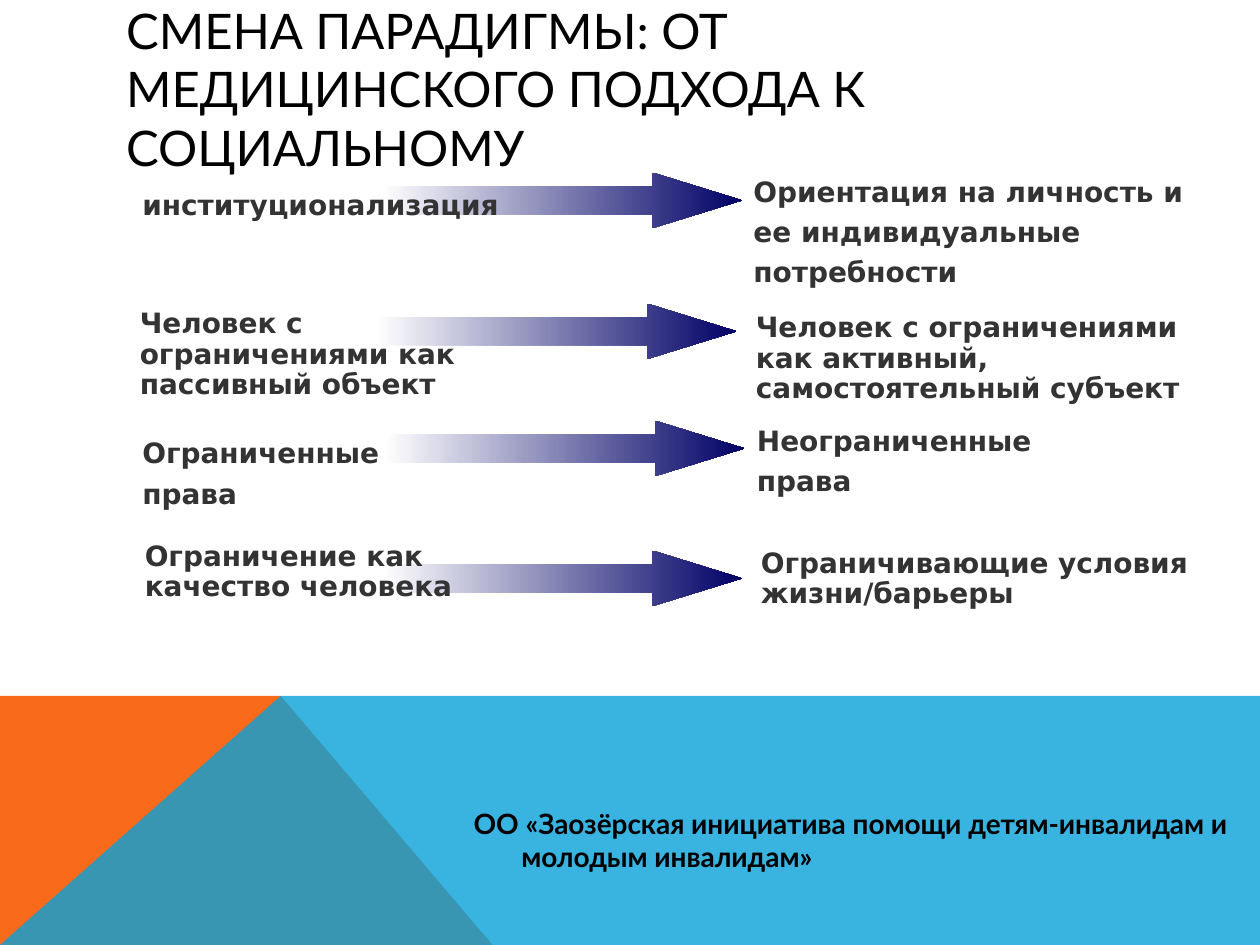
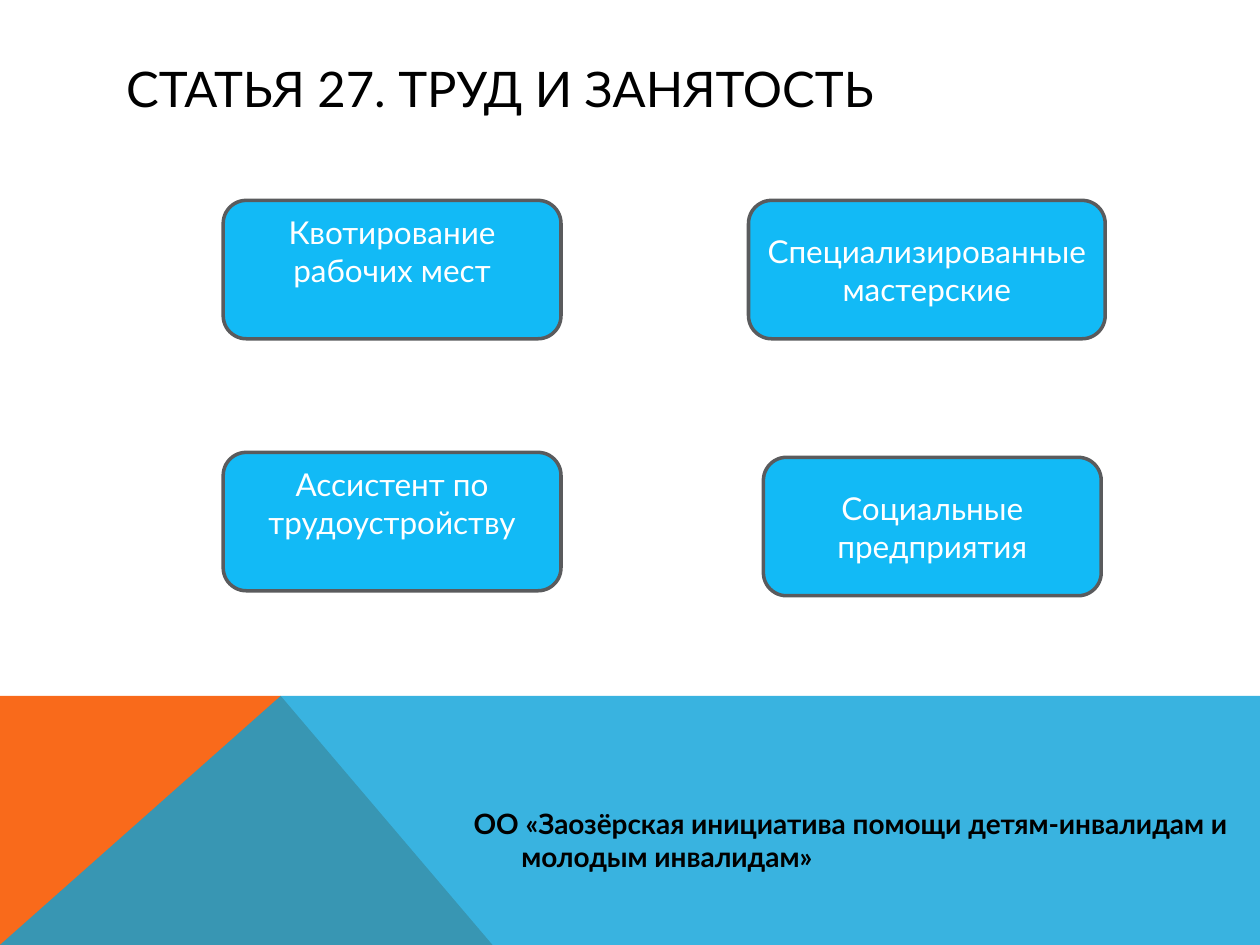
from dataclasses import dataclass

from pptx import Presentation
from pptx.dml.color import RGBColor
from pptx.enum.shapes import MSO_SHAPE
from pptx.enum.text import MSO_ANCHOR, MSO_AUTO_SIZE, PP_ALIGN
from pptx.oxml.ns import qn
from pptx.oxml.xmlchemy import OxmlElement
from pptx.presentation import Presentation as Deck
from pptx.shapes.autoshape import Shape
from pptx.slide import Slide
from pptx.text.text import _Paragraph as Paragraph
from pptx.util import Cm, Pt


@dataclass(frozen=True)
class TextStyle:
    font: str
    size: int
    color: str
    bold: bool = False


@dataclass(frozen=True)
class Theme:
    title: TextStyle = TextStyle("Lato", 28, "000000")
    footer: TextStyle = TextStyle("Lato", 16, "000000", True)
    approach: TextStyle = TextStyle("DejaVu Sans", 16, "333333", True)
    measure: TextStyle = TextStyle("Lato", 18, "FFFFFF")
    orange: str = "F96A1B"
    blue: str = "08A1D9"
    blue_opacity: int = 80
    arrow_start: str = "FFFFFF"
    arrow_end: str = "000066"
    measure_fill: str = "12BAF6"
    measure_line: str = "5A5B5D"


@dataclass(frozen=True)
class Box:
    """A rectangle in centimetres."""
    left: float
    top: float
    width: float
    height: float

    def lengths(self) -> tuple[Cm, Cm, Cm, Cm]:
        return Cm(self.left), Cm(self.top), Cm(self.width), Cm(self.height)


@dataclass(frozen=True)
class Approach:
    text: str
    box: Box


@dataclass(frozen=True)
class Shift:
    """A move from the medical approach to the social one."""
    medical: Approach
    social: Approach
    arrow_left: float
    arrow_top: float
    line_spacing: float


@dataclass(frozen=True)
class Measure:
    text: str
    box: Box
    raised: bool = False


THEME = Theme()
SLIDE_WIDTH, SLIDE_HEIGHT = 25.4, 19.05
BAND_TOP, PEAK_X, ORANGE_RIGHT = 14.03, 5.66, 9.93
TITLE_BOX = Box(2.29, 1.02, 20.88, 1.52)
FOOTER_BOX = Box(9.3, 16.13, 16.1, 2.21)
FOOTER_INDENT = 0.96
FOOTER_TEXT = "ОО «Заозёрская инициатива помощи детям-инвалидам и молодым инвалидам»"
ARROW_WIDTH, ARROW_HEIGHT = 7.26, 1.12
SIDE_INSET, RAISED_INSET = 0.15, 0.89

SHIFTS = (
    Shift(
        Approach("институционализация", Box(2.62, 3.53, 7.85, 1.07)),
        Approach("Ориентация на личность и ее индивидуальные потребности",
                 Box(14.94, 3.25, 9.25, 2.72)),
        7.7, 3.48, 1.2),
    Shift(
        Approach("Человек с ограничениями как пассивный объект",
                 Box(2.57, 6.12, 7.75, 2.11)),
        Approach("Человек с ограничениями как активный, самостоятельный субъект",
                 Box(14.99, 6.2, 9.27, 2.08)),
        7.59, 6.12, 0.9),
    Shift(
        Approach("Ограниченные права", Box(2.62, 8.53, 7.32, 1.8)),
        Approach("Неограниченные права", Box(15.01, 8.28, 8.13, 1.88)),
        7.75, 8.48, 1.2),
    Shift(
        Approach("Ограничение как качество человека", Box(2.67, 10.8, 7.57, 1.5)),
        Approach("Ограничивающие условия жизни/барьеры",
                 Box(15.09, 10.95, 9.53, 1.5)),
        7.7, 11.1, 0.9),
)

MEASURES = (
    Measure("Квотирование рабочих мест", Box(4.5, 4.04, 6.81, 2.79), raised=True),
    Measure("Специализированные мастерские", Box(15.09, 4.04, 7.19, 2.79)),
    Measure("Ассистент по трудоустройству", Box(4.5, 9.12, 6.81, 2.79), raised=True),
    Measure("Социальные предприятия", Box(15.39, 9.22, 6.81, 2.79)),
)


def rgb(color: str) -> RGBColor:
    return RGBColor.from_string(color)


def add_run(paragraph: Paragraph, text: str, style: TextStyle) -> None:
    run = paragraph.add_run()
    run.text = text
    run.font.name = style.font
    run.font.size = Pt(style.size)
    run.font.bold = style.bold
    run.font.color.rgb = rgb(style.color)


def add_text(slide: Slide, text: str, box: Box, style: TextStyle) -> Shape:
    shape = slide.shapes.add_textbox(*box.lengths())
    shape.text_frame.word_wrap = True
    add_run(shape.text_frame.paragraphs[0], text, style)
    return shape


def add_band(slide: Slide, points: list[tuple[float, float]], color: str) -> Shape:
    corners = [(Cm(x), Cm(y)) for x, y in points]
    builder = slide.shapes.build_freeform(*corners[0])
    builder.add_line_segments(corners[1:], close=True)
    band = builder.convert_to_shape()
    band.shadow.inherit = False
    band.fill.solid()
    band.fill.fore_color.rgb = rgb(color)
    band.line.fill.background()
    return band


def set_opacity(shape: Shape, percent: int) -> None:
    alpha = OxmlElement("a:alpha")
    alpha.set("val", str(percent * 1000))
    shape._element.spPr.find(f"{qn('a:solidFill')}/{qn('a:srgbClr')}").append(alpha)


def add_footer(slide: Slide) -> None:
    footer = add_text(slide, FOOTER_TEXT, FOOTER_BOX, THEME.footer)
    paragraph = footer.text_frame.paragraphs[0]
    paragraph.space_before = Pt(8)
    properties = paragraph._p.get_or_add_pPr()
    properties.set("marL", str(Cm(FOOTER_INDENT)))
    properties.set("indent", str(-Cm(FOOTER_INDENT)))


def add_slide(presentation: Deck, title: str) -> Slide:
    """Add a slide with the shared title, bands and footer."""
    slide = presentation.slides.add_slide(presentation.slide_layouts[5])
    heading = slide.shapes.title
    heading.left, heading.top, heading.width, heading.height = TITLE_BOX.lengths()
    frame = heading.text_frame
    frame.auto_size = MSO_AUTO_SIZE.NONE
    frame.vertical_anchor = MSO_ANCHOR.MIDDLE
    frame.paragraphs[0].alignment = PP_ALIGN.LEFT
    add_run(frame.paragraphs[0], title, THEME.title)

    add_band(slide, [(0, SLIDE_HEIGHT), (0, BAND_TOP), (PEAK_X, BAND_TOP),
                     (ORANGE_RIGHT, SLIDE_HEIGHT)], THEME.orange)
    blue_band = add_band(slide, [(0, SLIDE_HEIGHT), (PEAK_X, BAND_TOP),
                                 (SLIDE_WIDTH, BAND_TOP),
                                 (SLIDE_WIDTH, SLIDE_HEIGHT)], THEME.blue)
    set_opacity(blue_band, THEME.blue_opacity)
    add_footer(slide)
    return slide


def add_arrow(slide: Slide, left: float, top: float) -> None:
    box = Box(left, top, ARROW_WIDTH, ARROW_HEIGHT)
    arrow = slide.shapes.add_shape(MSO_SHAPE.RIGHT_ARROW, *box.lengths())
    arrow.adjustments[0] = 0.5
    arrow.adjustments[1] = 1.61
    arrow.shadow.inherit = False
    arrow.line.fill.background()
    arrow.fill.gradient()
    arrow.fill.gradient_angle = 0
    colors = (THEME.arrow_start, THEME.arrow_end)
    for position, (stop, color) in enumerate(zip(arrow.fill.gradient_stops, colors)):
        stop.position = position
        stop.color.rgb = rgb(color)


def add_shift(slide: Slide, shift: Shift) -> None:
    add_arrow(slide, shift.arrow_left, shift.arrow_top)
    for approach in (shift.medical, shift.social):
        shape = add_text(slide, approach.text, approach.box, THEME.approach)
        shape.text_frame.auto_size = MSO_AUTO_SIZE.SHAPE_TO_FIT_TEXT
        shape.text_frame.paragraphs[0].line_spacing = shift.line_spacing


def add_measure(slide: Slide, measure: Measure) -> None:
    shape = slide.shapes.add_shape(
        MSO_SHAPE.FLOWCHART_ALTERNATE_PROCESS, *measure.box.lengths())
    shape.shadow.inherit = False
    shape.fill.solid()
    shape.fill.fore_color.rgb = rgb(THEME.measure_fill)
    shape.line.color.rgb = rgb(THEME.measure_line)
    shape.line.width = Pt(2)
    frame = shape.text_frame
    frame.word_wrap = True
    frame.vertical_anchor = MSO_ANCHOR.MIDDLE
    frame.margin_left = frame.margin_right = Cm(SIDE_INSET)
    if measure.raised:
        frame.margin_bottom = Cm(RAISED_INSET)
    frame.paragraphs[0].alignment = PP_ALIGN.CENTER
    add_run(frame.paragraphs[0], measure.text, THEME.measure)


def main() -> None:
    presentation = Presentation()
    presentation.slide_width = Cm(SLIDE_WIDTH)
    presentation.slide_height = Cm(SLIDE_HEIGHT)

    paradigm = add_slide(
        presentation, "СМЕНА ПАРАДИГМЫ: ОТ МЕДИЦИНСКОГО ПОДХОДА К СОЦИАЛЬНОМУ")
    for shift in SHIFTS:
        add_shift(paradigm, shift)

    employment = add_slide(presentation, "СТАТЬЯ 27. ТРУД И ЗАНЯТОСТЬ")
    for measure in MEASURES:
        add_measure(employment, measure)

    presentation.save("out.pptx")


if __name__ == "__main__":
    main()
